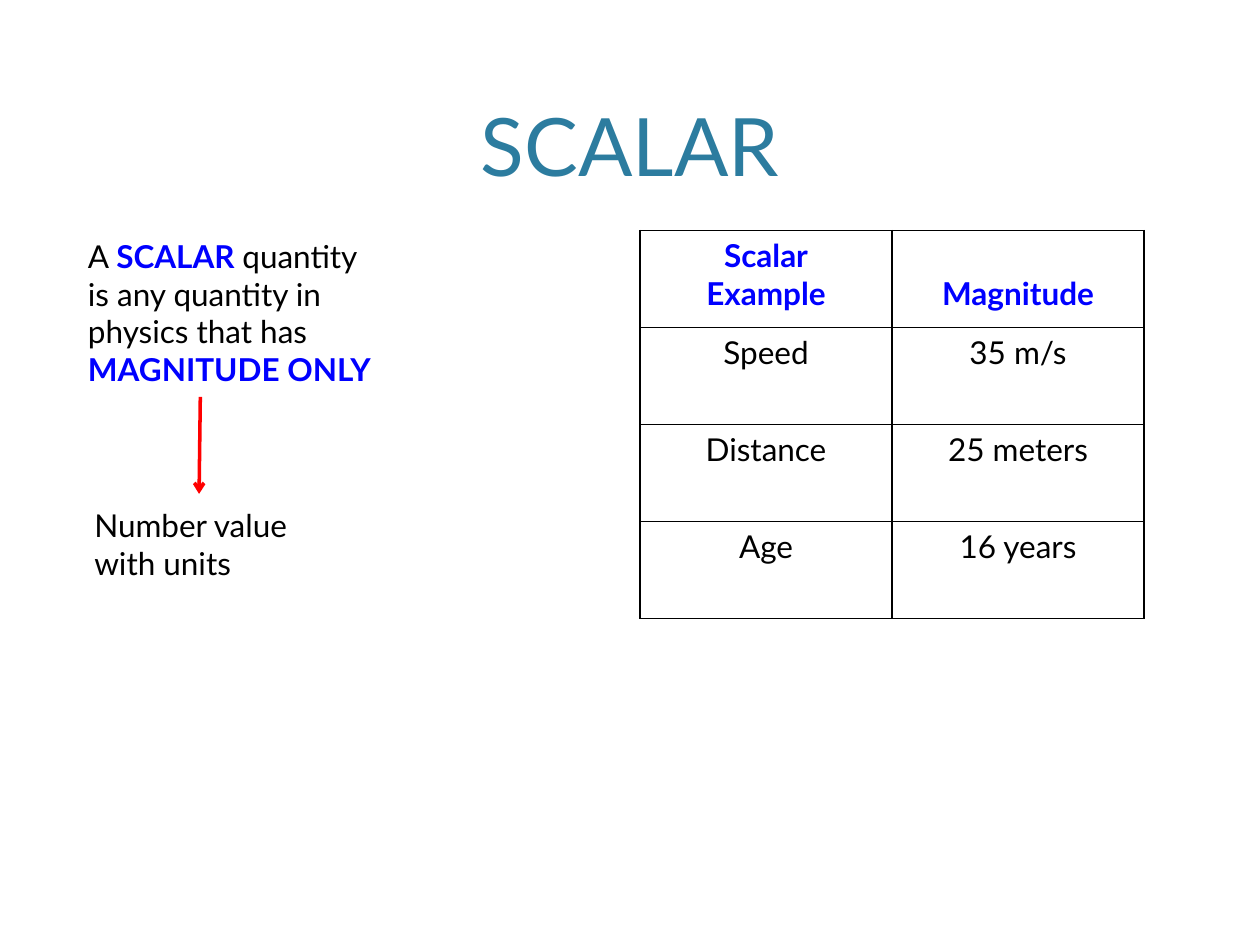
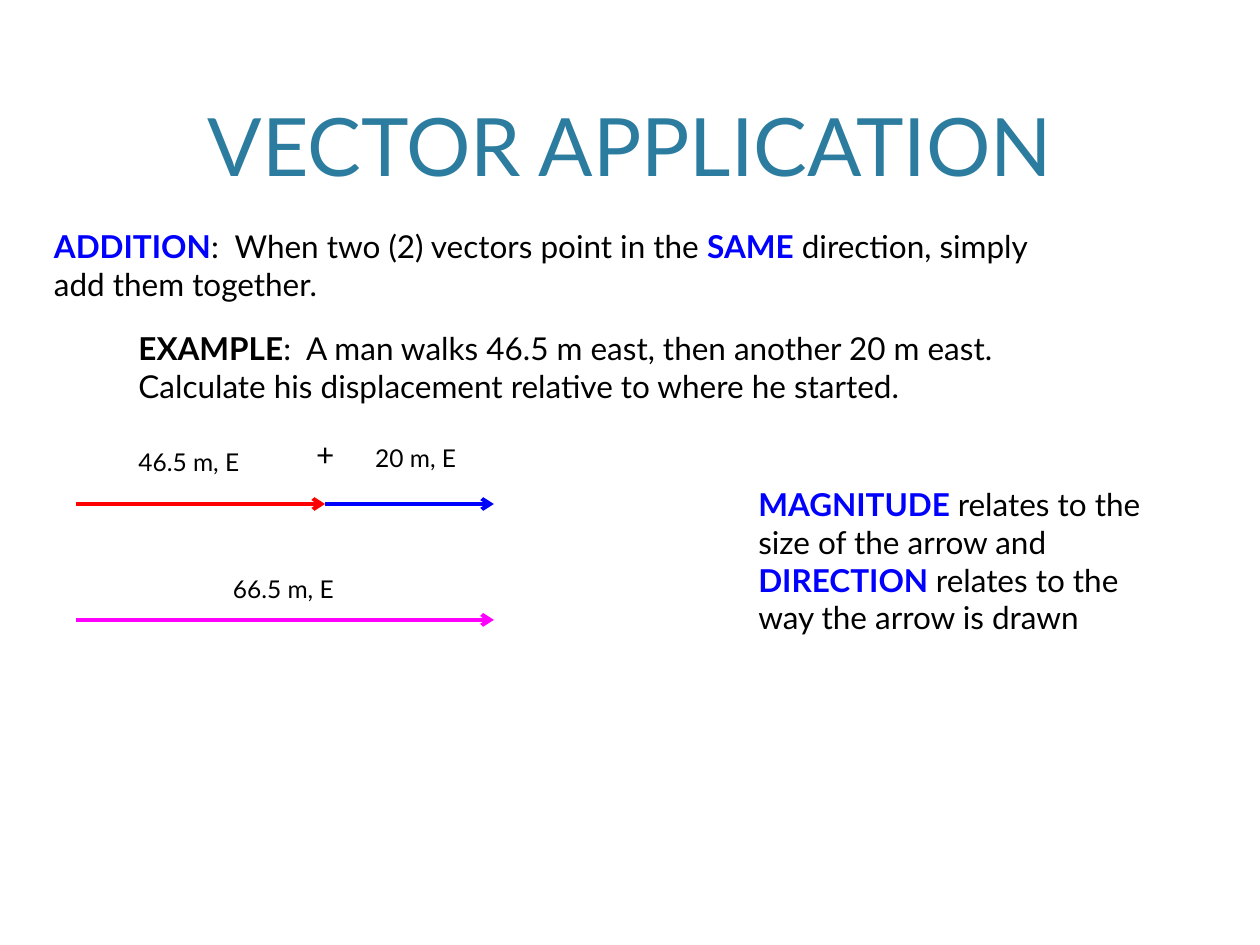
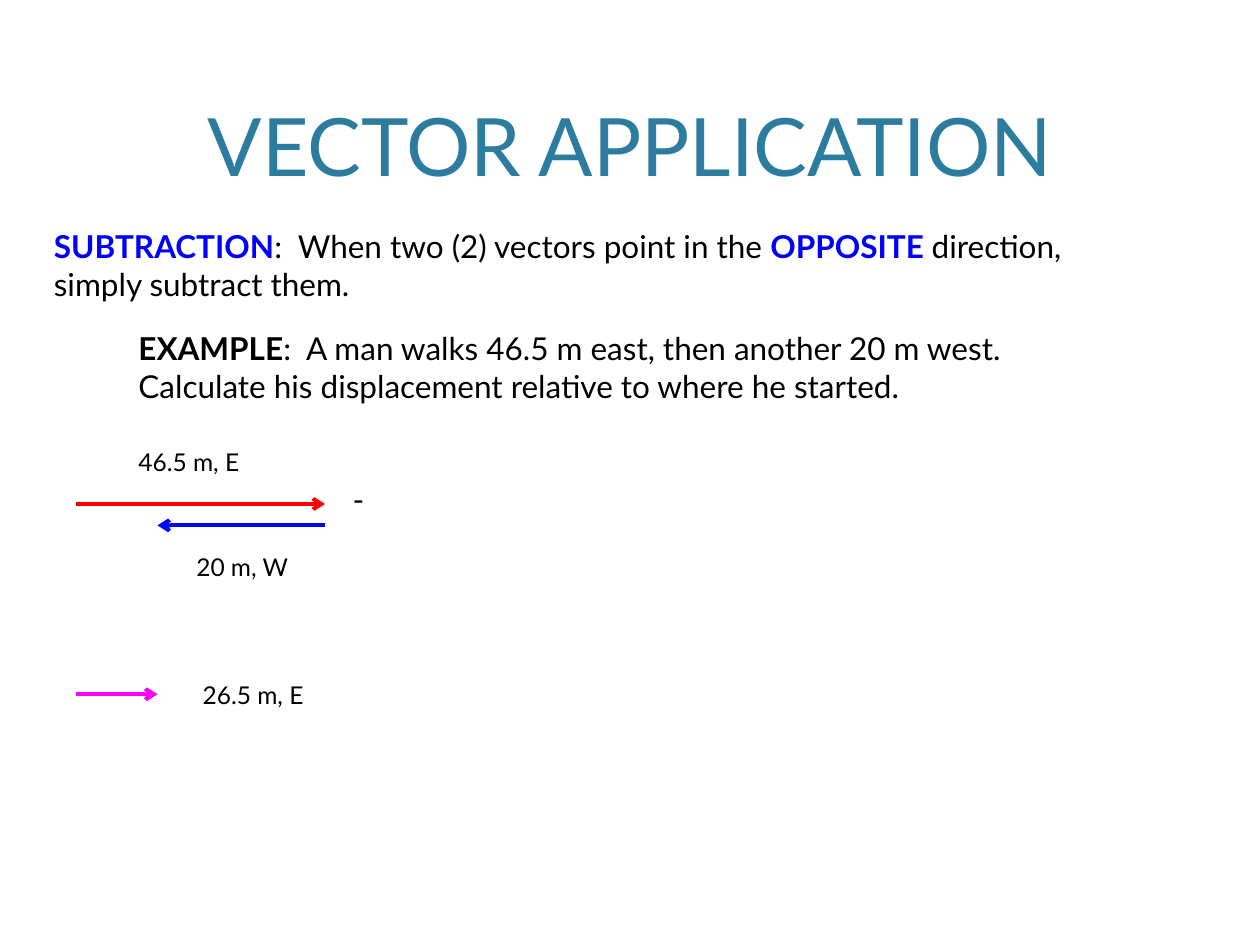
"""Builds three physics slides on scalars and on adding and subtracting vectors."""
import dataclasses

import pptx
import pptx.dml.color
import pptx.enum.shapes
import pptx.enum.text
import pptx.oxml
import pptx.oxml.ns
import pptx.util

Inches = pptx.util.Inches
Pt = pptx.util.Pt
qn = pptx.oxml.ns.qn
PP_ALIGN = pptx.enum.text.PP_ALIGN
MSO_ANCHOR = pptx.enum.text.MSO_ANCHOR


@dataclasses.dataclass(frozen=True)
class Theme:
    font: str = "Lato"
    title: str = "2C7C9F"
    text: str = "000000"
    accent: str = "0000FF"
    first: str = "FF0000"
    second: str = "0000FF"
    result: str = "FF00FF"
    title_size: float = 46
    body_size: float = 18
    label_size: float = 14
    arrow_width: float = 2.25
    border_width: float = 1


class Deck:
    def __init__(self, theme):
        self.theme = theme
        self.prs = pptx.Presentation()
        self.prs.slide_width = Inches(10)
        self.prs.slide_height = Inches(7.5)
        self.s = None

    def format_run(self, r, size, color, bold=False):
        r.font.name = self.theme.font
        r.font.size = Pt(size)
        r.font.bold = bold
        r.font.color.rgb = pptx.dml.color.RGBColor.from_string(color)

    def slide(self, title):
        self.s = self.prs.slides.add_slide(self.prs.slide_layouts[6])
        tf = self.text(0.6, 0.12, 8.8, 1.46, title, self.theme.title_size, self.theme.title)
        tf.vertical_anchor = MSO_ANCHOR.BOTTOM
        tf.paragraphs[0].alignment = PP_ALIGN.CENTER

    def text(self, left, top, width, height, text, size=None, color=None, strong=None):
        """Adds a text box in which the parts between asterisks are strong."""
        t = self.theme
        sp = self.s.shapes.add_textbox(Inches(left), Inches(top), Inches(width), Inches(height))
        tf = sp.text_frame
        tf.word_wrap = True
        for i, line in enumerate(text.split("\n")):
            p = tf.add_paragraph() if i else tf.paragraphs[0]
            for j, part in enumerate(line.split("*")):
                if part:
                    r = p.add_run()
                    r.text = part
                    bold = j % 2 == 1
                    part_color = (strong or t.accent) if bold else (color or t.text)
                    self.format_run(r, size or t.body_size, part_color, bold)
        return tf

    def label(self, left, top, text):
        self.text(left, top, 1.2, 0.34, text, self.theme.label_size)

    def sign(self, left, top, text):
        self.text(left, top, 0.35, 0.4, text)

    def arrow(self, x1, y1, x2, y2, color, width=None):
        cxn = self.s.shapes.add_connector(
            pptx.enum.shapes.MSO_CONNECTOR.STRAIGHT,
            Inches(x1), Inches(y1), Inches(x2), Inches(y2))
        cxn.line.color.rgb = pptx.dml.color.RGBColor.from_string(color)
        cxn.line.width = Pt(width or self.theme.arrow_width)
        spPr = cxn._element.spPr
        tail = spPr.find(qn("a:ln")).makeelement(qn("a:tailEnd"), {"type": "arrow"})
        spPr.find(qn("a:ln")).append(tail)
        spPr.append(spPr.makeelement(qn("a:effectLst"), {}))

    def border(self, cell):
        tcPr = cell._tc.get_or_add_tcPr()
        for side in ("lnL", "lnR", "lnT", "lnB"):
            tcPr.append(pptx.oxml.parse_xml(
                f'<a:{side} xmlns:a="http://schemas.openxmlformats.org/drawingml/2006/main"'
                f' w="{Pt(self.theme.border_width)}"><a:solidFill>'
                f'<a:srgbClr val="{self.theme.text}"/></a:solidFill></a:{side}>'))

    def table(self, left, top, col_width, row_height, rows):
        t = self.theme
        table = self.s.shapes.add_table(
            len(rows), len(rows[0]), Inches(left), Inches(top),
            Inches(col_width * len(rows[0])), Inches(row_height * len(rows))).table
        table.first_row = table.horz_banding = False
        header_lines = max(text.count("\n") for text in rows[0])
        for i, row in enumerate(rows):
            table.rows[i].height = Inches(row_height)
            for j, text in enumerate(row):
                cell = table.cell(i, j)
                cell.text_frame.text = text
                self.border(cell)
                cell.fill.background()
                if i == 0:
                    missing = header_lines - text.count("\n")
                    cell.margin_top = Inches(0.05 + 0.3 * missing)
                for p in cell.text_frame.paragraphs:
                    p.alignment = PP_ALIGN.CENTER
                    for r in p.runs:
                        self.format_run(r, t.body_size, t.text if i else t.accent, i == 0)
        return table

    def vector_slide(self, rule, direction):
        """Adds a slide with a rule, a walking example and its first vector."""
        self.slide("VECTOR APPLICATION")
        self.text(0.33, 1.75, 8.84, 0.71, rule)
        self.text(1, 2.56, 7.78, 0.71,
                  f"*EXAMPLE*:  A man walks 46.5 m east, then another 20 m {direction}.\n"
                  "Calculate his displacement relative to where he started.",
                  strong=self.theme.text)
        self.arrow(0.6, 4, 2.58, 4, self.theme.first)
        self.label(1, 3.5, "46.5 m, E")


def scalar(deck):
    deck.slide("SCALAR")
    deck.text(0.6, 1.83, 2.8, 1.31,
              "A *SCALAR *quantity\nis any quantity in\nphysics that has\n*MAGNITUDE ONLY*")
    deck.arrow(1.59, 3.15, 1.58, 3.92, deck.theme.first, 2)
    deck.text(0.65, 3.97, 1.87, 0.71, "Number value\nwith units")
    deck.table(5.08, 1.83, 2, 0.77, [
        ("Scalar\nExample", "Magnitude"),
        ("Speed", "35 m/s"),
        ("Distance", "25 meters"),
        ("Age", "16 years"),
    ])


def addition(deck):
    deck.vector_slide("*ADDITION*:  When two (2) vectors point in the *SAME* direction, simply\n"
                      "add them together.", "east")
    deck.arrow(2.58, 4, 3.92, 4, deck.theme.second)
    deck.arrow(0.6, 4.92, 3.92, 4.92, deck.theme.result)
    deck.sign(2.41, 3.4, "+")
    deck.label(2.88, 3.47, "20 m, E")
    deck.label(1.75, 4.51, "66.5 m, E")
    deck.text(5.92, 3.8, 3.42, 1.31,
              "*MAGNITUDE *relates to the\nsize of the arrow and\n"
              "*DIRECTION *relates to the\nway the arrow is drawn")


def subtraction(deck):
    deck.vector_slide("*SUBTRACTION*:  When two (2) vectors point in the *OPPOSITE *direction,\n"
                      "simply subtract them.", "west")
    deck.arrow(2.58, 4.17, 1.25, 4.17, deck.theme.second)
    deck.arrow(0.6, 5.51, 1.25, 5.51, deck.theme.result)
    deck.sign(2.7, 3.76, "-")
    deck.label(1.46, 4.33, "20 m, W")
    deck.label(1.51, 5.35, "26.5 m, E")


def main():
    deck = Deck(Theme())
    for build in (scalar, addition, subtraction):
        build(deck)
    deck.prs.save("out.pptx")


if __name__ == "__main__":
    main()
